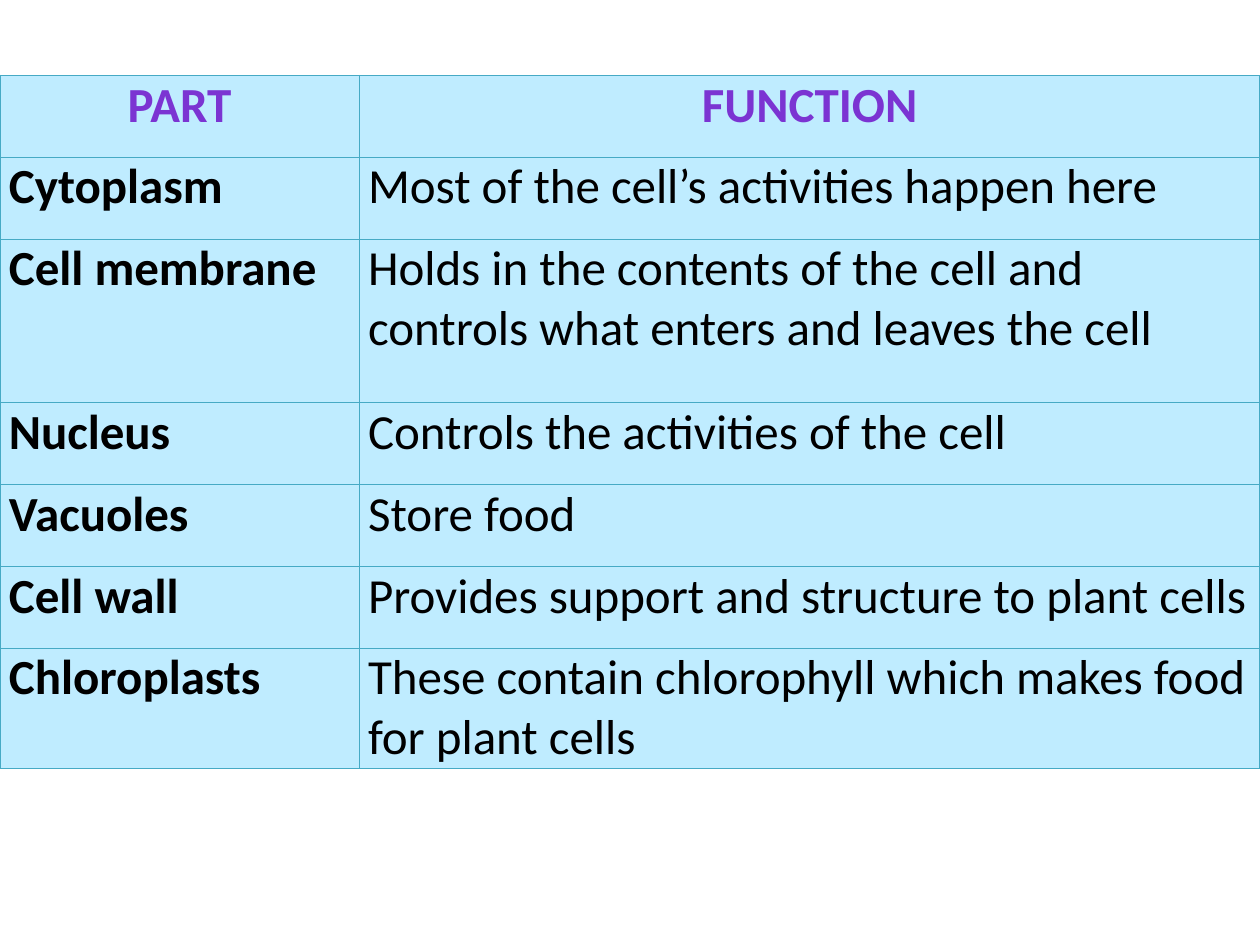
from lxml import etree
from pptx import Presentation
from pptx import util as u
from pptx.dml.color import RGBColor
from pptx.enum import text
from pptx.oxml import ns

COLORS = {"cell": "BFECFF", "border": "46AAC5", "heading": "7B34D2", "body": "000000"}
CELL_PARTS = [
    ("PART", "FUNCTION"),
    ("Cytoplasm", "Most of the cell’s activities happen here"),
    ("Cell membrane", "Holds in the contents of the cell and controls what enters and leaves the cell"),
    ("Nucleus", "Controls the activities of the cell"),
    ("Vacuoles", "Store food"),
    ("Cell wall", "Provides support and structure to plant cells"),
    ("Chloroplasts", "These contain chlorophyll which makes food for plant cells"),
]
COLUMN_WIDTHS = [7.24, 18.16]
ROW_HEIGHT = 1.65
TALL_ROW = 2


def add_borders(cell):
    properties = cell._tc.get_or_add_tcPr()
    for index, side in enumerate(("lnL", "lnR", "lnT", "lnB")):
        line = etree.Element(ns.qn(f"a:{side}"), w=str(u.Pt(0.75)))
        fill = etree.SubElement(line, ns.qn("a:solidFill"))
        etree.SubElement(fill, ns.qn("a:srgbClr"), val=COLORS["border"])
        properties.insert(index, line)


deck = Presentation()
deck.slide_width, deck.slide_height = u.Cm(25.4), u.Cm(19.05)
page = deck.slides.add_slide(deck.slide_layouts[6])

frame = page.shapes.add_table(
    len(CELL_PARTS), len(COLUMN_WIDTHS), u.Cm(0), u.Cm(1.52),
    u.Cm(sum(COLUMN_WIDTHS)), u.Cm(ROW_HEIGHT * (len(CELL_PARTS) + 1)),
)
table = frame.table
table.horz_banding = False
for column, width in zip(table.columns, COLUMN_WIDTHS):
    column.width = u.Cm(width)

for row_index, words in enumerate(CELL_PARTS):
    is_heading = row_index == 0
    table.rows[row_index].height = u.Cm(ROW_HEIGHT * (2 if row_index == TALL_ROW else 1))
    for column_index, wording in enumerate(words):
        cell = table.cell(row_index, column_index)
        cell.margin_left = cell.margin_right = u.Cm(0.18)
        cell.margin_top = cell.margin_bottom = u.Cm(0)
        cell.fill.solid()
        cell.fill.fore_color.rgb = RGBColor.from_string(COLORS["cell"])
        add_borders(cell)
        cell.text_frame.text = wording
        para = cell.text_frame.paragraphs[0]
        para.alignment = text.PP_ALIGN.CENTER if is_heading else text.PP_ALIGN.LEFT
        span = para.runs[0]
        span.font.name = "Calibri"
        span.font.size = u.Pt(28)
        span.font.bold = is_heading or column_index == 0
        span.font.color.rgb = RGBColor.from_string(COLORS["heading" if is_heading else "body"])

deck.save("out.pptx")
